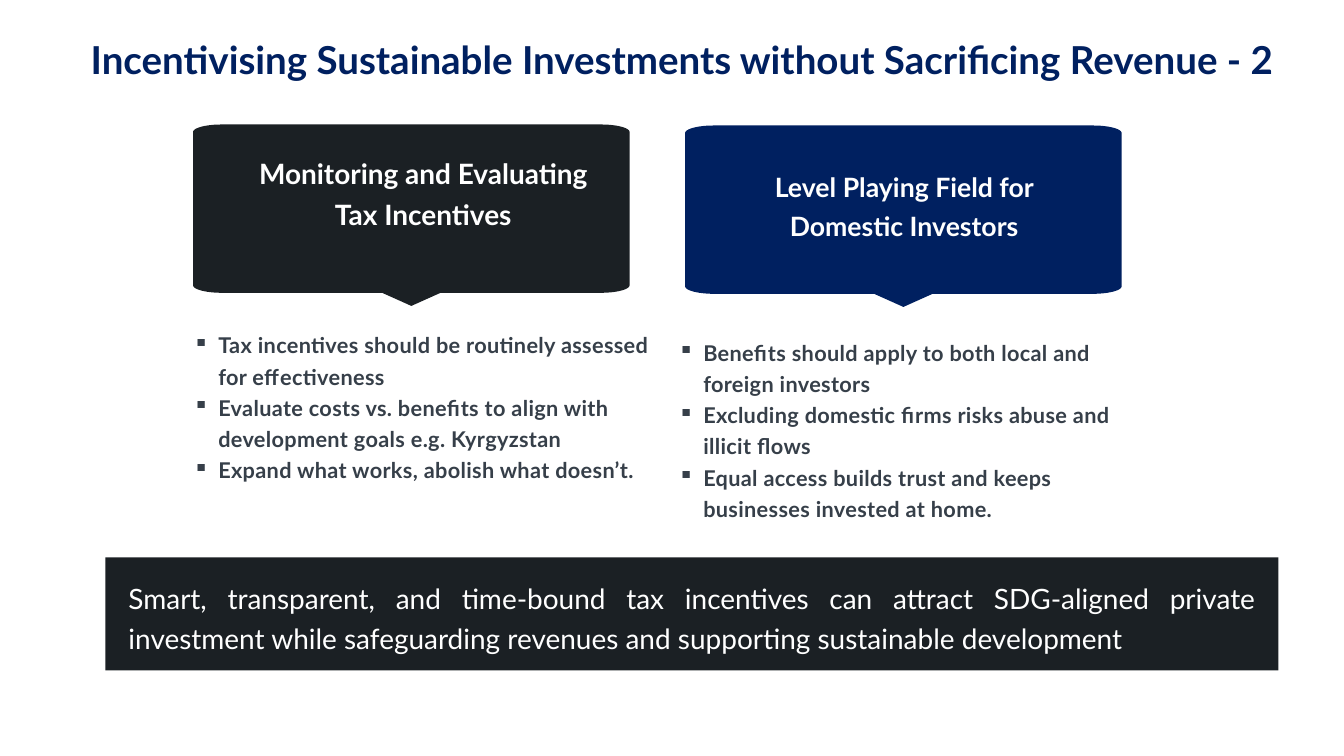
from math import cos, pi, sin

from lxml.etree import SubElement
from pptx import Presentation
from pptx.dml.color import RGBColor
from pptx.enum.shapes import MSO_SHAPE
from pptx.enum.text import MSO_ANCHOR, PP_ALIGN
from pptx.oxml.ns import qn
from pptx.util import Inches, Pt

COLORS = {"navy": "002060", "dark": "1B2024", "body": "363F49", "white": "FFFFFF"}
FONT = "Lato"
BULLET_INDENT = 0.5

# Each column: banner colour, banner box, heading, heading size and box, bullets and box
COLUMNS = [
    ("dark", (3.83, 2.47, 8.66, 3.6),
     "Monitoring and Evaluating Tax Incentives", 40, (4.95, 2.93, 6.89, 1.63),
     ["Tax incentives should be routinely assessed for effectiveness",
      "Evaluate costs vs. benefits to align with development goals e.g. Kyrgyzstan",
      "Expand what works, abolish what doesn’t."], (3.83, 6.49, 9.17, 3.07)),
    ("navy", (13.59, 2.49, 8.66, 3.6),
     "Level Playing Field for Domestic Investors", 38, (14.49, 3.22, 6.89, 1.56),
     ["Benefits should apply to both local and foreign investors",
      "Excluding domestic firms risks abuse and illicit flows",
      "Equal access builds trust and keeps businesses invested at home."],
     (13.45, 6.63, 9.58, 3.8)),
]


def paint(shape, color):
    shape.shadow.inherit = False
    shape.fill.solid()
    shape.fill.fore_color.rgb = RGBColor.from_string(COLORS[color])
    shape.line.fill.background()


def add_bullet(paragraph):
    properties = paragraph._p.get_or_add_pPr()
    indent = Inches(BULLET_INDENT)
    properties.set("marL", str(indent))
    properties.set("indent", str(-indent))
    SubElement(properties, qn("a:buChar")).set("char", "▪")


def write(frame, lines, size, color, bold=True, align=PP_ALIGN.LEFT,
          spacing=1.2, bulleted=False, wrap=True):
    frame.word_wrap = wrap
    frame.vertical_anchor = MSO_ANCHOR.TOP
    if bulleted:
        for side in ("left", "top", "right", "bottom"):
            setattr(frame, f"margin_{side}", 0)
    for index, line in enumerate(lines):
        paragraph = frame.add_paragraph() if index else frame.paragraphs[0]
        paragraph.alignment = align
        paragraph.line_spacing = spacing
        if bulleted:
            add_bullet(paragraph)
        run = paragraph.add_run()
        run.text = line
        for name, value in {"name": FONT, "size": Pt(size), "bold": bold}.items():
            setattr(run.font, name, value)
        run.font.color.rgb = RGBColor.from_string(COLORS[color])
        if bulleted:
            run._r.get_or_add_rPr().set("spc", "50")


def add_text(slide, box, lines, size, color, **options):
    frame = slide.shapes.add_textbox(*map(Inches, box)).text_frame
    write(frame, lines, size, color, **options)


def add_banner(slide, box, color):
    """Draw a panel with flat elliptical corners and a pointer at its foot."""
    left, top, width, height = box
    corner_x, corner_y, tip_height, tip_half = 0.57, 0.15, 0.26, 0.58
    right, foot, middle = left + width, top + height - tip_height, left + width / 2

    def corner(center_x, center_y, start, steps=12):
        angles = [start + pi / 2 * step / steps for step in range(steps + 1)]
        return [(center_x + corner_x * cos(a), center_y + corner_y * sin(a))
                for a in angles]

    outline = [
        *corner(left + corner_x, top + corner_y, pi),
        *corner(right - corner_x, top + corner_y, 1.5 * pi),
        *corner(right - corner_x, foot - corner_y, 0),
        (middle + tip_half, foot), (middle, top + height), (middle - tip_half, foot),
        *corner(left + corner_x, foot - corner_y, pi / 2),
    ]
    points = [(Inches(x), Inches(y)) for x, y in outline]
    builder = slide.shapes.build_freeform(*points[0])
    builder.add_line_segments(points[1:], close=True)
    paint(builder.convert_to_shape(), color)


def add_column(slide, color, banner_box, heading, heading_size, heading_box,
               bullets, bullets_box):
    add_banner(slide, banner_box, color)
    add_text(slide, heading_box, [heading], heading_size, "white",
             align=PP_ALIGN.CENTER)
    add_text(slide, bullets_box, bullets, 31, "body", bulleted=True)


def add_conclusion(slide, box, message):
    left, top, width, height = box
    message_box = (left + 0.36, top + 0.29, width - 0.72, height - 0.61)
    for area in (box, message_box):
        panel = slide.shapes.add_shape(MSO_SHAPE.RECTANGLE, *map(Inches, area))
        paint(panel, "dark")
    write(panel.text_frame, [message], 40, "white", bold=False,
          align=PP_ALIGN.JUSTIFY)


def main():
    presentation = Presentation()
    presentation.slide_width = Inches(26.66)
    presentation.slide_height = Inches(15)
    slide = presentation.slides.add_slide(presentation.slide_layouts[6])
    add_text(slide, (1.7, 0.66, 24.37, 1.03),
             ["Incentivising Sustainable Investments without Sacrificing Revenue - 2"],
             55, "navy", spacing=1.0, wrap=False)
    for column in COLUMNS:
        add_column(slide, *column)
    add_conclusion(
        slide, (2.09, 11.06, 23.27, 2.24),
        "Smart, transparent, and time-bound tax incentives can attract SDG-aligned "
        "private investment while safeguarding revenues and supporting sustainable "
        "development")
    presentation.save("out.pptx")


if __name__ == "__main__":
    main()
